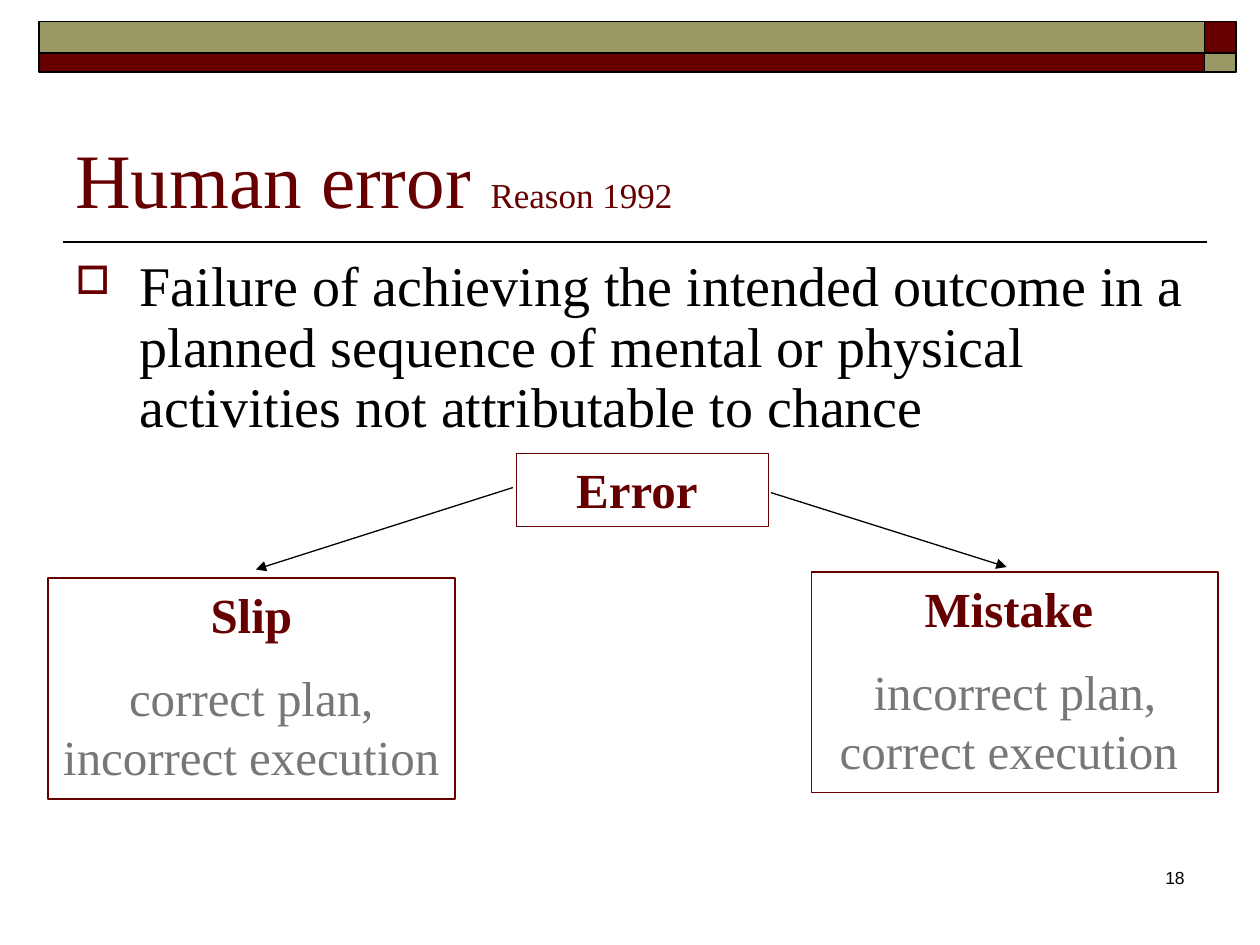
from dataclasses import dataclass

from lxml import etree
from pptx import Presentation
from pptx.dml.color import RGBColor
from pptx.enum.shapes import MSO_CONNECTOR, MSO_SHAPE
from pptx.enum.text import MSO_ANCHOR, PP_ALIGN
from pptx.oxml.ns import qn
from pptx.util import Inches, Pt

RECT, STRAIGHT = MSO_SHAPE.RECTANGLE, MSO_CONNECTOR.STRAIGHT
TOP, BOTTOM = MSO_ANCHOR.TOP, MSO_ANCHOR.BOTTOM
CENTER, RIGHT = PP_ALIGN.CENTER, PP_ALIGN.RIGHT


@dataclass(frozen=True)
class Theme:
    maroon: str = "660000"
    olive: str = "999966"
    black: str = "000000"
    grey: str = "777777"
    serif: str = "Times New Roman"
    sans: str = "Arial"
    title: int = 44
    body: int = 32
    box: int = 28
    cite: int = 20
    number: int = 10


T = Theme()


def add_run(p, text, size, color, name=T.serif, bold=False):
    r = p.add_run()
    r.text = text
    for key, value in {"size": Pt(size), "name": name, "bold": bold}.items():
        setattr(r.font, key, value)
    r.font.color.rgb = RGBColor.from_string(color)


def format_paragraph(p, **formats):
    for key, value in formats.items():
        setattr(p, key, value)


def add_text(s, at, anchor=TOP):
    """Add a wrapping text box and return its first paragraph."""
    tf = s.shapes.add_textbox(*map(Inches, at)).text_frame
    tf.word_wrap = True
    tf.vertical_anchor = anchor
    return tf.paragraphs[0]


def add_rect(s, at, line, fill=None):
    sp = s.shapes.add_shape(RECT, *map(Inches, at))
    sp.shadow.inherit = False
    if fill:
        sp.fill.solid()
        sp.fill.fore_color.rgb = RGBColor.from_string(fill)
    else:
        sp.fill.background()
    sp.line.color.rgb = RGBColor.from_string(line)
    sp.line.width = Pt(1)
    return sp


def add_line(s, start, end, width, arrow=False):
    c = s.shapes.add_connector(STRAIGHT, *map(Inches, start + end))
    c.line.color.rgb = RGBColor.from_string(T.black)
    c.line.width = Pt(width)
    if arrow:
        etree.SubElement(c.line._get_or_add_ln(), qn("a:tailEnd"), type="triangle")
    etree.SubElement(c._element.spPr, qn("a:effectLst"))


def add_bullet(p, char, color, percent, indent):
    """Give the paragraph a coloured bullet with a hanging indent."""
    pPr = p._p.get_or_add_pPr()
    pPr.set("marL", str(Inches(indent)))
    pPr.set("indent", str(Inches(-indent)))
    clr = etree.SubElement(pPr, qn("a:buClr"))
    etree.SubElement(clr, qn("a:srgbClr"), val=color)
    etree.SubElement(pPr, qn("a:buSzPct"), val=str(percent * 1000))
    etree.SubElement(pPr, qn("a:buChar"), char=char)


def add_box(s, at, heading, detail=None):
    tf = add_rect(s, at, T.maroon).text_frame
    tf.word_wrap = True
    tf.vertical_anchor = TOP
    p = tf.paragraphs[0]
    format_paragraph(p, alignment=CENTER, space_before=Pt(T.box / 2))
    add_run(p, heading, T.box, T.maroon, bold=True)
    if detail:
        p = tf.add_paragraph()
        format_paragraph(p, alignment=CENTER, space_before=Pt(T.box / 2))
        add_run(p, detail, T.box, T.grey)


def add_banner(s):
    """Two rows of bars whose colours swap in the right-hand corner."""
    left, corner, wide, narrow = 0.31, 9.56, 9.25, 0.25
    for top, height, bar, end in ((0.17, 0.25, T.olive, T.maroon),
                                  (0.42, 0.15, T.maroon, T.olive)):
        add_rect(s, (left, top, wide, height), T.black, bar)
        add_rect(s, (corner, top, narrow, height), T.black, end)


def main():
    prs = Presentation()
    prs.slide_width, prs.slide_height = Inches(10), Inches(7.5)
    s = prs.slides.add_slide(prs.slide_layouts[6])

    add_line(s, (0.5, 1.92), (9.58, 1.92), 1)
    add_banner(s)

    p = add_text(s, (7.42, 6.83, 2.08, 0.5))
    p.alignment = RIGHT
    add_run(p, "18", T.number, T.black, T.sans)

    p = add_text(s, (0.5, 0.58, 9, 1.25), BOTTOM)
    add_run(p, "Human error ", T.title, T.maroon)
    add_run(p, "Reason 1992", T.cite, T.maroon)

    p = add_text(s, (0.5, 2, 9, 1.65))
    format_paragraph(p, line_spacing=0.9, space_before=Pt(T.body * 0.2))
    add_bullet(p, "□", T.maroon, 70, 0.51)
    add_run(p, "Failure of achieving the intended outcome in a planned sequence "
               "of mental or physical activities not attributable to chance",
            T.body, T.black)

    add_box(s, (4.1, 3.6, 2, 0.58), "Error ")
    add_box(s, (0.38, 4.59, 3.23, 1.75), "Slip", "correct plan, incorrect execution ")
    add_box(s, (6.44, 4.54, 3.23, 1.75), "Mistake ", "incorrect plan, correct execution ")
    add_line(s, (4.07, 3.87), (2.03, 4.52), 0.75, arrow=True)
    add_line(s, (6.12, 3.91), (7.99, 4.5), 0.75, arrow=True)

    prs.save("out.pptx")


if __name__ == "__main__":
    main()
